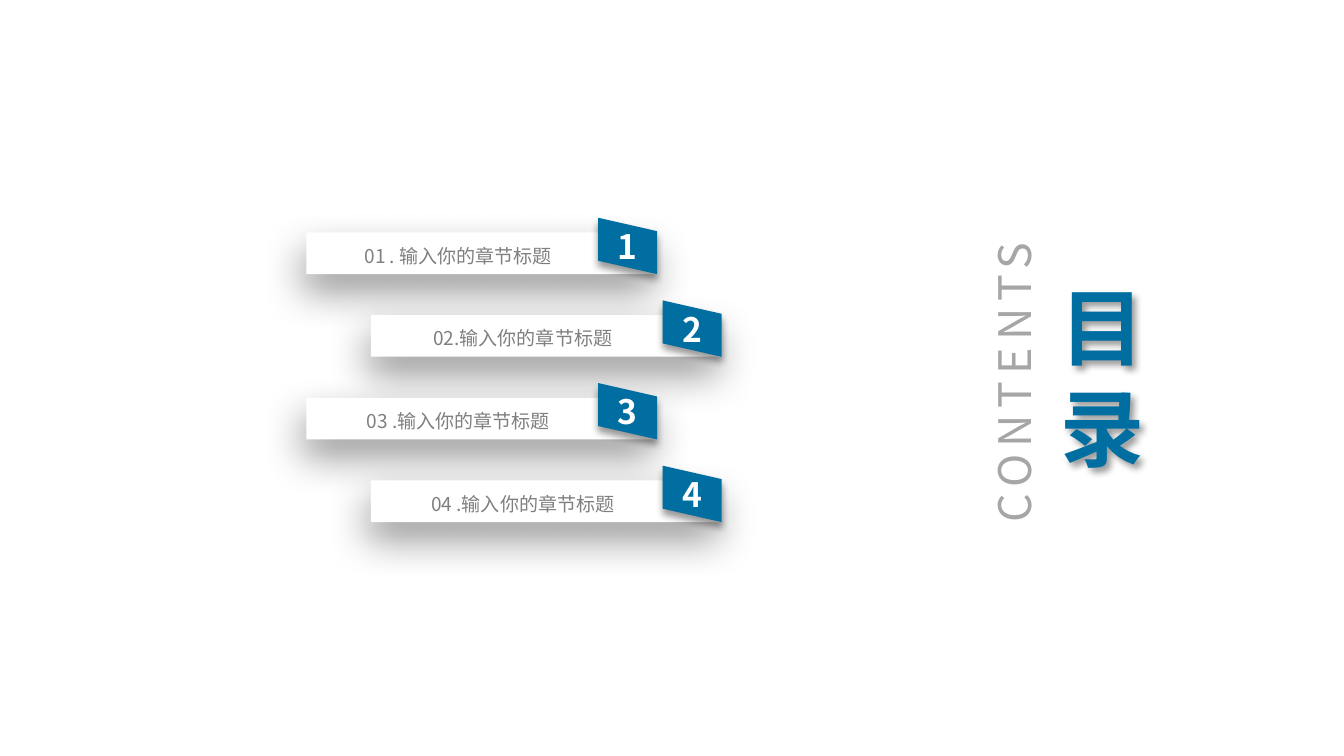
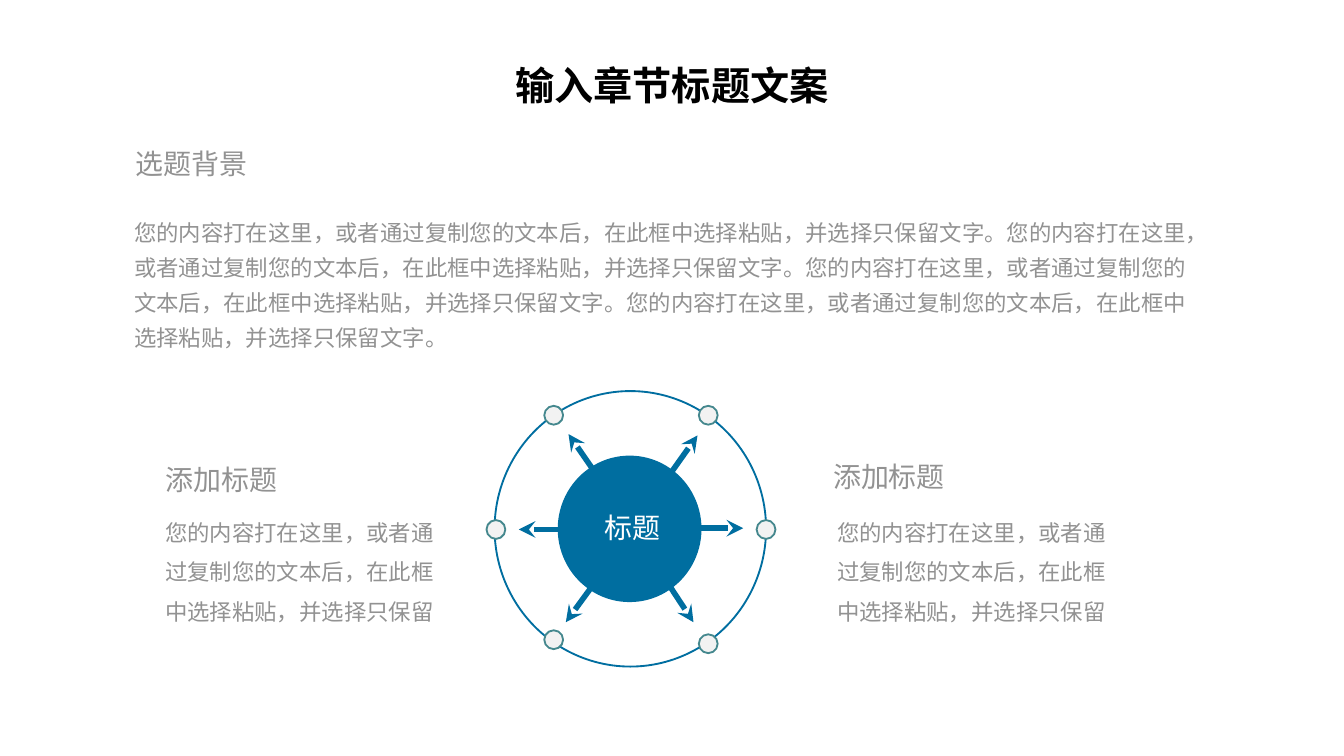
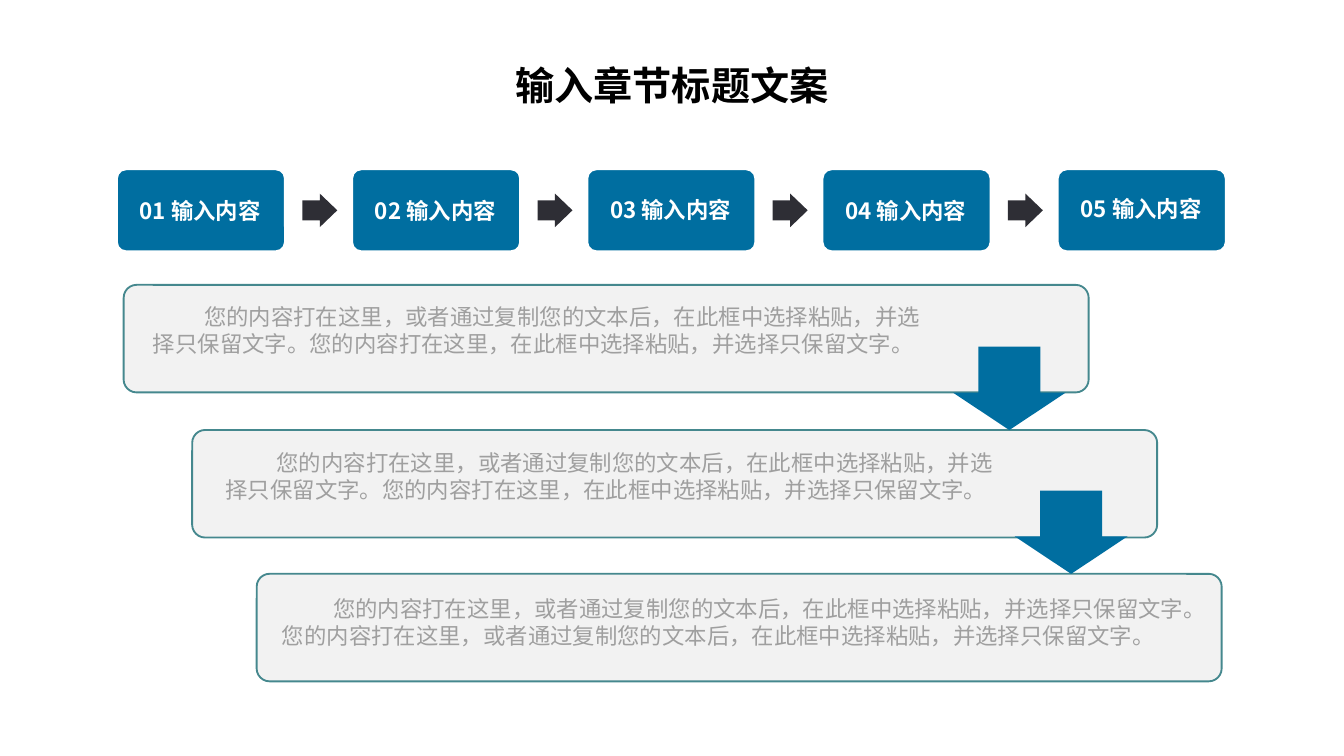
from lxml.etree import SubElement
from pptx import Presentation
from pptx.dml.color import RGBColor
from pptx.enum.shapes import MSO_CONNECTOR as Connector, MSO_SHAPE as Preset
from pptx.enum.text import MSO_ANCHOR as Anchor, MSO_AUTO_SIZE as AutoSize, PP_ALIGN as Align
from pptx.oxml.ns import qn
from pptx.util import Inches, Pt

FONT = "Noto Sans CJK SC"
COLORS = {
    "blue": "006EA0",
    "teal": "45888E",
    "pale": "F2F2F2",
    "white": "FFFFFF",
    "black": "000000",
    "dark": "2E2E35",
    "chapter": "7F7F7F",
    "body": "929292",
    "panel": "9F9F9F",
    "contents": "A6A6A6",
}
BAR_SHADOW = (22, 10, 101)
BADGE_SHADOW = (4, 3, 90)
HEADING_SHADOW = (4, 3, 45)
TITLE = "输入章节标题文案"
PASTE = "您的内容打在这里，或者通过复制您的文本后，在此框中选择粘贴，并选择只保留"
SENTENCE = PASTE + "文字。"
SHORT_SENTENCE = "您的内容打在这里，在此框中选择粘贴，并选择只保留文字。"


def color(name):
    return RGBColor.from_string(COLORS[name])


def write(shape, text, size=12, ink="body", bold=False, align=Align.LEFT,
          anchor=Anchor.TOP, wrap=True, grow=False, spacing=None, indent=0,
          insets=(0.1, 0.05, 0.1, 0.05), tracking=0):
    frame = shape.text_frame
    frame.word_wrap = wrap
    frame.vertical_anchor = anchor
    frame.auto_size = AutoSize.SHAPE_TO_FIT_TEXT if grow else AutoSize.NONE
    frame.margin_left, frame.margin_top, frame.margin_right, frame.margin_bottom = map(Inches, insets)
    paragraph = frame.paragraphs[0]
    paragraph.alignment = align
    if spacing:
        paragraph.line_spacing = spacing
    if indent:
        properties = paragraph._p.get_or_add_pPr()
        properties.set("marL", "0")
        properties.set("indent", str(Inches(indent)))
    run = paragraph.add_run()
    run.text = text
    run.font.name = FONT
    run.font.size = Pt(size)
    run.font.bold = bold
    run.font.color.rgb = color(ink)
    properties = run._r.get_or_add_rPr()
    SubElement(properties, qn("a:ea"), typeface=FONT)
    if tracking:
        properties.set("spc", str(round(tracking * 100)))


class Deck:
    def __init__(self):
        self.presentation = Presentation()
        self.presentation.slide_width = Inches(10)
        self.presentation.slide_height = Inches(10 * 9 / 16)
        self.slide = None

    def new_slide(self, title=None):
        self.slide = self.presentation.slides.add_slide(self.presentation.slide_layouts[6])
        if title:
            self.text((3.42, 0.41, 3.16, 0.45), title, size=21, ink="black",
                      bold=True, align=Align.CENTER, grow=True)

    def paint(self, shape, fill=None, line=None, shadow=None):
        if fill:
            shape.fill.solid()
            shape.fill.fore_color.rgb = color(fill)
        else:
            shape.fill.background()
        if line:
            shape.line.color.rgb = color(line)
            shape.line.width = Pt(1)
        else:
            shape.line.fill.background()
        shape.shadow.inherit = False
        if shadow:
            blur, distance, angle = shadow
            effects = shape._element.spPr.find(qn("a:effectLst"))
            outer = SubElement(effects, qn("a:outerShdw"), blurRad=str(Pt(blur)),
                               dist=str(Pt(distance)), dir=str(angle * 60000),
                               algn="ctr", rotWithShape="0")
            tint = SubElement(outer, qn("a:srgbClr"), val=COLORS["black"])
            SubElement(tint, qn("a:alpha"), val="40000")
        return shape

    def shape(self, preset, area, adjustments=(), **style):
        shape = self.slide.shapes.add_shape(preset, *map(Inches, area))
        for index, value in enumerate(adjustments):
            shape.adjustments[index] = value
        return self.paint(shape, **style)

    def outline(self, points, **style):
        corners = [(Inches(x), Inches(y)) for x, y in points]
        builder = self.slide.shapes.build_freeform(*corners[0], scale=1.0)
        builder.add_line_segments(corners[1:], close=True)
        return self.paint(builder.convert_to_shape(), **style)

    def text(self, area, text, shadow=None, **style):
        box = self.slide.shapes.add_textbox(*map(Inches, area))
        write(box, text, **style)
        return self.paint(box, shadow=shadow)

    def arrow(self, start, end):
        connector = self.slide.shapes.add_connector(Connector.STRAIGHT, *map(Inches, start + end))
        connector.line.color.rgb = color("blue")
        connector.line.width = Pt(3)
        properties = connector._element.spPr
        SubElement(properties.find(qn("a:ln")), qn("a:tailEnd"), type="stealth")
        SubElement(properties, qn("a:effectLst"))


def contents_slide(deck):
    deck.new_slide()
    chapters = ["01 . 输入你的章节标题", "02.输入你的章节标题",
                "03 .输入你的章节标题", "04 .输入你的章节标题"]
    for index, chapter in enumerate(chapters):
        left = 2.28 + 0.48 * (index % 2)
        top = 1.73 + 0.615 * index
        bar = deck.shape(Preset.RECTANGLE, (left, top, 2.61, 0.31), fill="white", shadow=BAR_SHADOW)
        write(bar, chapter, size=10.2, ink="chapter", align=Align.CENTER,
              anchor=Anchor.MIDDLE, spacing=1.2, insets=(0.09, 0, 0.44, 0))
        near, far = left + 2.17, left + 2.61
        badge = deck.outline([(near, top - 0.11), (near, top + 0.21), (far, top + 0.31), (far, top - 0.01)],
                             fill="blue", shadow=BADGE_SHADOW)
        write(badge, str(index + 1), size=18, ink="white", bold=True,
              align=Align.CENTER, anchor=Anchor.MIDDLE)
    contents = deck.text((6.12, 2.6, 2.84, 0.49), "CONTENTS", size=24, ink="contents",
                         align=Align.CENTER, anchor=Anchor.MIDDLE, wrap=False, tracking=3.8)
    contents.rotation = 270
    deck.text((7.79, 2.31, 0.46, 0.98), "目录", size=45, ink="blue", bold=True,
              anchor=Anchor.MIDDLE, shadow=HEADING_SHADOW)


def background_slide(deck):
    deck.new_slide(TITLE)
    deck.shape(Preset.OVAL, (3.68, 2.91, 2.02, 2.05), line="blue")
    for left, top in [(5.2, 3.02), (4.05, 3.02), (3.62, 3.87), (5.63, 3.87), (5.2, 4.72), (4.05, 4.69)]:
        deck.shape(Preset.OVAL, (left, top, 0.14, 0.14), fill="pale", line="teal")
    spokes = [((4.7, 3.93), (5.19, 3.24)), ((4.69, 3.93), (5.53, 3.93)),
              ((4.7, 3.91), (4.23, 3.23)), ((4.69, 3.94), (3.86, 3.94)),
              ((4.7, 3.96), (4.21, 4.63)), ((4.72, 3.96), (5.16, 4.63))]
    for start, end in spokes:
        deck.arrow(start, end)
    deck.text((0.9, 1.52, 8.17, 1.39), SENTENCE * 4, spacing=1.3, grow=True)
    deck.text((0.91, 1.04, 1.04, 0.35), "选题背景", size=15, wrap=False, grow=True)
    deck.shape(Preset.OVAL, (4.15, 3.39, 1.07, 1.09), fill="blue")
    hub = deck.shape(Preset.RECTANGLE, (4.4, 3.75, 0.69, 0.35), fill="blue")
    write(hub, "标题", size=15, ink="white", wrap=False, grow=True)
    for heading_left, heading_top, body_left in [(6.1, 3.37, 6.13), (1.13, 3.39, 1.13)]:
        deck.text((heading_left, heading_top, 1.04, 0.35), "添加标题", size=15, wrap=False, grow=True)
        deck.text((body_left, 3.72, 2.25, 0.95), PASTE, spacing=Pt(21.1), grow=True)


def process_slide(deck):
    deck.new_slide(TITLE)
    shorter = SENTENCE + SHORT_SENTENCE
    panels = [(0.92, 2.12, (1.04, 2.21, 5.94, 0.5), shorter),
              (1.43, 3.2, (1.58, 3.29, 5.92, 0.5), shorter),
              (1.91, 4.27, (2, 4.38, 6.96, 0.5), SENTENCE * 2)]
    for left, top, text_area, text in panels:
        deck.shape(Preset.ROUNDED_RECTANGLE, (left, top, 7.18, 0.8), [0.12], fill="pale", line="teal")
        deck.text(text_area, text, ink="panel", indent=0.38, grow=True)
    label_tops = [1.42, 1.42, 1.41, 1.42, 1.4]
    for index, label_top in enumerate(label_tops):
        left = 0.87 + 1.75 * index
        deck.shape(Preset.ROUNDED_RECTANGLE, (left, 1.26, 1.25, 0.61), [0.11], fill="blue", line="white")
        deck.text((left, label_top, 1.24, 0.3), f"{index + 1:02} 输入内容",
                  ink="white", bold=True, align=Align.CENTER, grow=True)
        if index < len(label_tops) - 1:
            deck.shape(Preset.RIGHT_ARROW, (left + 1.38, 1.44, 0.26, 0.25), [0.6, 0.52], fill="dark")
    for left, top in [(7.09, 2.58), (7.55, 3.65)]:
        deck.shape(Preset.DOWN_ARROW, (left, top, 0.84, 0.62), [0.55, 0.45], fill="blue")


def main():
    deck = Deck()
    contents_slide(deck)
    background_slide(deck)
    process_slide(deck)
    deck.presentation.save("out.pptx")


if __name__ == "__main__":
    main()
